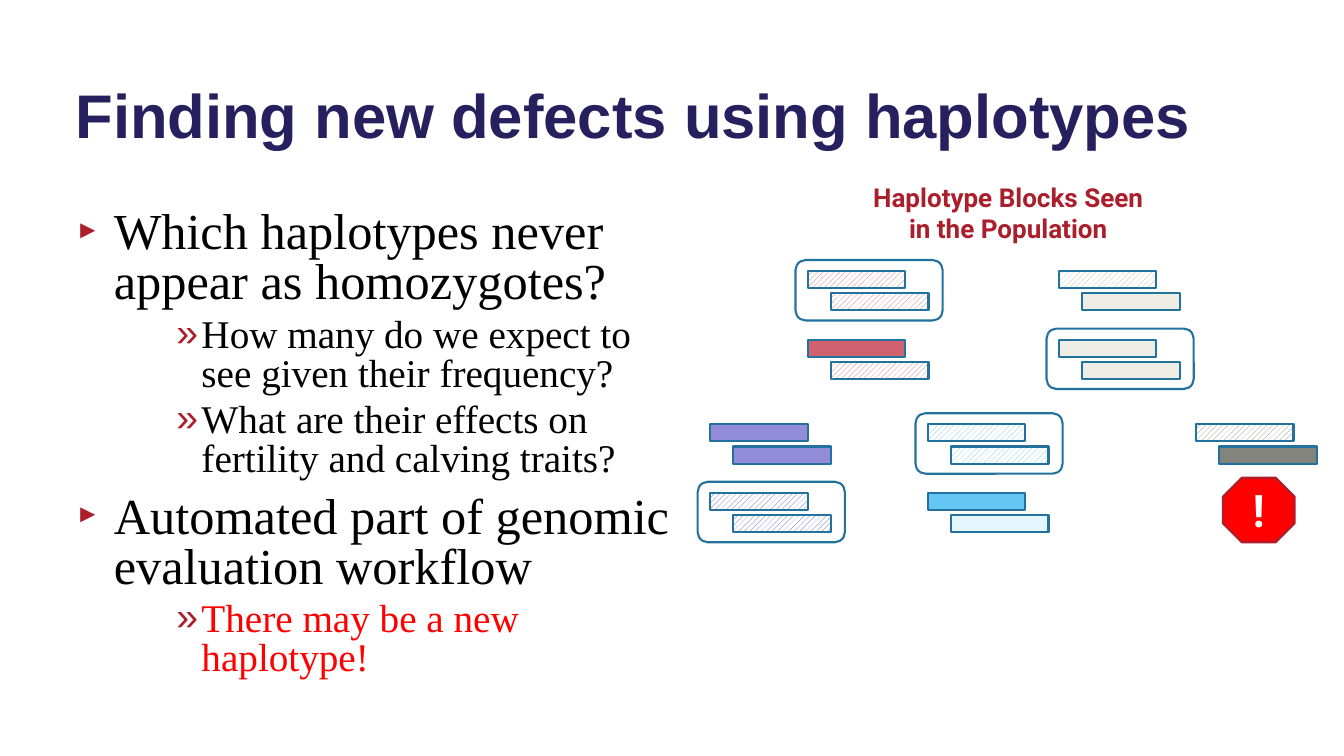
from dataclasses import dataclass

from lxml import etree
from pptx import Presentation
from pptx.dml.color import RGBColor
from pptx.enum.dml import MSO_PATTERN
from pptx.enum.shapes import MSO_SHAPE
from pptx.enum.text import MSO_ANCHOR, PP_ALIGN
from pptx.oxml.ns import qn
from pptx.util import Inches, Pt

RECT = MSO_SHAPE.RECTANGLE
ROUNDED = MSO_SHAPE.ROUNDED_RECTANGLE
OCTAGON = MSO_SHAPE.OCTAGON
DIAGONAL = MSO_PATTERN.WIDE_UPWARD_DIAGONAL
VERTICAL = MSO_PATTERN.DARK_VERTICAL
MIDDLE = MSO_ANCHOR.MIDDLE
CENTER = PP_ALIGN.CENTER


@dataclass(frozen=True)
class Theme:
    navy: str = "26205E"
    crimson: str = "AB1E2C"
    black: str = "000000"
    white: str = "FFFFFF"
    red: str = "FF0000"
    outline: str = "23729E"
    lavender: str = "938CD8"
    violet: str = "5C53C4"
    sky: str = "65C6F5"
    pale_sky: str = "E3F5FD"
    rose: str = "D26170"
    sand: str = "B7B293"
    pale_sand: str = "EEEDE6"
    grey: str = "83857C"
    heading: str = "Arial"
    body: str = "Times New Roman"
    label: str = "Roboto"
    title_size: float = 44
    point_size: float = 36
    detail_size: float = 28
    alert_size: float = 32
    caption_size: float = 18.6
    line_width: float = 1.5


T = Theme()

LEVELS = {
    0: {"size": T.point_size, "margin": 0.38, "hang": 0.38, "before": 10,
        "char": "►", "scale": 50},
    2: {"size": T.detail_size, "margin": 1.25, "hang": 0.25, "before": 5,
        "char": "»", "scale": 100},
}

POINTS = [
    (0, "Which haplotypes never appear as homozygotes?", T.black),
    (2, "How many do we expect to see given their frequency?", T.black),
    (2, "What are their effects on fertility and calving traits?", T.black),
    (0, "Automated part of genomic evaluation workflow", T.black),
    (2, "There may be a new haplotype!", T.red),
]

CLUSTERS = [
    (0.11, 2.46, [(T.lavender, None), (T.lavender, VERTICAL),
                  (T.violet, DIAGONAL), (T.violet, DIAGONAL)], 1),
    (2.27, 2.46, [(T.sky, DIAGONAL), (T.sky, DIAGONAL),
                  (T.sky, VERTICAL), (T.pale_sky, None)], 0),
    (1.08, 0.94, [(T.rose, DIAGONAL), (T.rose, DIAGONAL),
                  (T.rose, None), (T.rose, DIAGONAL)], 0),
    (3.57, 0.94, [(T.sand, DIAGONAL), (T.pale_sand, None),
                  (T.pale_sand, None), (T.pale_sand, None)], 1),
    (4.93, 2.46, [(T.grey, DIAGONAL), (T.grey, None)], None),
]


def rgb(value):
    return RGBColor.from_string(value)


def add_run(p, text, size, font, color, bold=False):
    r = p.add_run()
    r.text = text
    for name, value in {"size": Pt(size), "name": font, "bold": bold}.items():
        setattr(r.font, name, value)
    r.font.color.rgb = rgb(color)


def add_text_box(slide, box):
    tf = slide.shapes.add_textbox(*map(Inches, box)).text_frame
    tf.word_wrap = True
    return tf


def add_bullet(p, level):
    pPr = p._p.get_or_add_pPr()
    pPr.set("marL", str(Inches(level["margin"])))
    pPr.set("indent", str(-Inches(level["hang"])))
    color = etree.SubElement(pPr, qn("a:buClr"))
    etree.SubElement(color, qn("a:srgbClr"), val=T.crimson)
    etree.SubElement(pPr, qn("a:buSzPct"), val=str(level["scale"] * 1000))
    etree.SubElement(pPr, qn("a:buFont"), typeface=T.heading)
    etree.SubElement(pPr, qn("a:buChar"), char=level["char"])


def add_outlined(shapes, kind, box, color=None, pattern=None, line=T.outline):
    s = shapes.add_shape(kind, *map(Inches, box))
    s.shadow.inherit = False
    s.line.color.rgb = rgb(line)
    s.line.width = Pt(T.line_width)
    if color is None:
        s.fill.background()
    elif pattern is None:
        s.fill.solid()
        s.fill.fore_color.rgb = rgb(color)
    else:
        s.fill.patterned()
        s.fill.pattern = pattern
        s.fill.fore_color.rgb = rgb(color)
        s.fill.back_color.rgb = rgb(T.white)
    return s


def add_title(slide, box):
    tf = add_text_box(slide, box)
    tf.vertical_anchor = MIDDLE
    p = tf.paragraphs[0]
    p.line_spacing = 0.9
    add_run(p, "Finding new defects using haplotypes", T.title_size,
            T.heading, T.navy, True)


def add_points(slide, box):
    tf = add_text_box(slide, box)
    for i, (depth, text, color) in enumerate(POINTS):
        p = tf.add_paragraph() if i else tf.paragraphs[0]
        level = LEVELS[depth]
        add_bullet(p, level)
        formats = {"level": depth, "line_spacing": 0.83,
                   "space_before": Pt(level["before"] if i else 0)}
        for name, value in formats.items():
            setattr(p, name, value)
        add_run(p, text, level["size"], T.body, color)


def add_cluster(slide, left, top, blocks, framed_pair):
    shapes = slide.shapes.add_group_shape().shapes
    pair_pitch, step_x, step_y = 0.68, 0.23, 0.22
    for i, (color, pattern) in enumerate(blocks):
        pair, side = divmod(i, 2)
        box = (left + side * step_x, top + pair * pair_pitch + side * step_y,
               0.97, 0.17)
        add_outlined(shapes, RECT, box, color, pattern)
    if framed_pair is not None:
        box = (left - 0.12, top + framed_pair * pair_pitch - 0.11, 1.46, 0.6)
        add_outlined(shapes, ROUNDED, box)


def add_alert(slide, box):
    s = add_outlined(slide.shapes, OCTAGON, box, T.red, line=T.crimson)
    tf = s.text_frame
    tf.vertical_anchor = MIDDLE
    p = tf.paragraphs[0]
    p.alignment = CENTER
    add_run(p, "!", T.alert_size, T.label, T.white, True)


def add_haplotype_panel(slide, box):
    left, top, width, height = box
    for x, y, blocks, framed_pair in CLUSTERS:
        add_cluster(slide, left + x, top + y, blocks, framed_pair)
    add_alert(slide, (left + 5.2, top + height - 0.64, 0.71, 0.64))
    tf = add_text_box(slide, (left + (width - 2.9) / 2, top, 2.9, 0.73))
    p = tf.paragraphs[0]
    p.alignment = CENTER
    add_run(p, "Haplotype Blocks Seen in the Population", T.caption_size,
            T.label, T.crimson, True)


def main():
    prs = Presentation()
    prs.slide_width, prs.slide_height = Inches(13.33), Inches(7.5)
    slide = prs.slides.add_slide(prs.slide_layouts[6])
    add_title(slide, (0.65, 0.32, 12.18, 1.71))
    add_points(slide, (0.65, 2.03, 6.19, 4.55))
    add_haplotype_panel(slide, (6.93, 1.75, 6.14, 3.63))
    prs.save("out.pptx")


if __name__ == "__main__":
    main()
